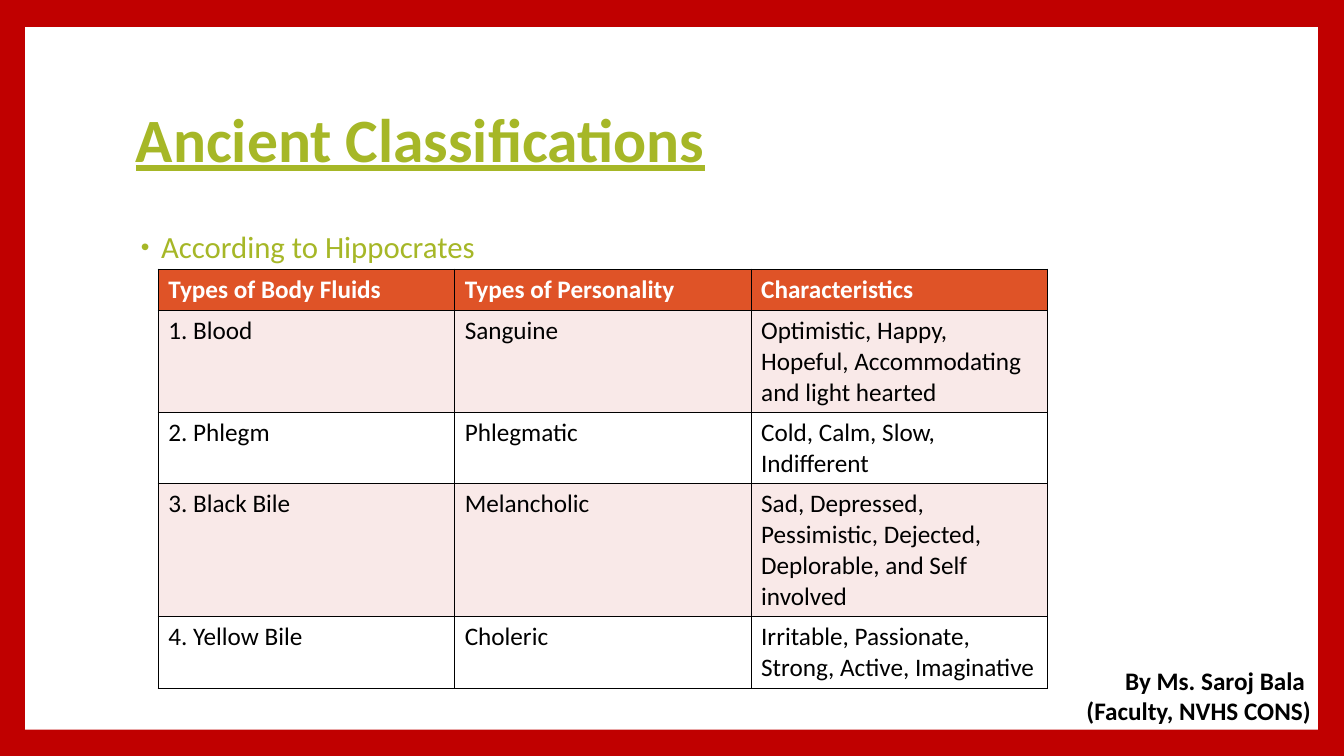
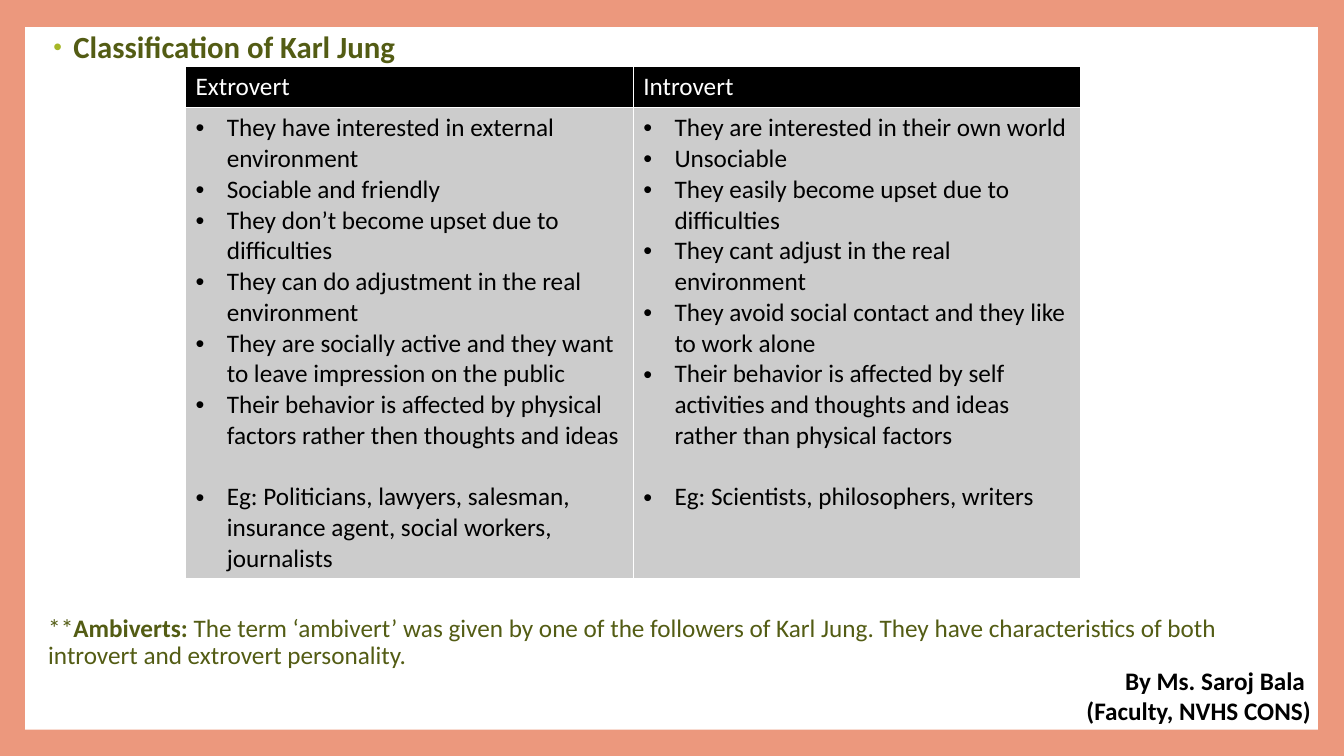
from lxml.etree import SubElement
from pptx import Presentation
from pptx.dml.color import RGBColor
from pptx.enum.shapes import MSO_SHAPE
from pptx.enum.text import MSO_ANCHOR, MSO_AUTO_SIZE, PP_ALIGN
from pptx.oxml.ns import qn
from pptx.util import Inches, Pt

# Content
CREDIT = ["By Ms. Saroj Bala ", "(Faculty, NVHS CONS)"]
TITLE = "Ancient Classifications"
FLUIDS_HEADING = "According to Hippocrates"
FLUIDS = [
    ("Types of Body Fluids", "Types of Personality", "Characteristics"),
    ("1. Blood", "Sanguine",
     "Optimistic, Happy, Hopeful, Accommodating and light hearted"),
    ("2. Phlegm", "Phlegmatic", "Cold, Calm, Slow, Indifferent"),
    ("3. Black Bile", "Melancholic",
     "Sad, Depressed, Pessimistic, Dejected, Deplorable, and Self involved"),
    ("4. Yellow Bile", "Choleric",
     "Irritable, Passionate, Strong, Active, Imaginative"),
]
JUNG_HEADING = "Classification of Karl Jung"
# A list in a cell becomes bullets; its last item, the examples, is set apart
JUNG = [
    ("Extrovert", "Introvert"),
    ([
        "They have interested in external environment",
        "Sociable and friendly",
        "They don’t become upset due to difficulties",
        "They can do adjustment in the real environment",
        "They are socially active and they want to leave impression on the public",
        "Their behavior is affected by physical factors rather then thoughts and ideas",
        "Eg: Politicians, lawyers, salesman, insurance agent, social workers, journalists",
    ], [
        "They are interested in their own world",
        "Unsociable",
        "They easily become upset due to difficulties",
        "They cant adjust in the real environment",
        "They avoid social contact and they like to work alone",
        "Their behavior is affected by self activities and thoughts and ideas "
        "rather than physical factors",
        "Eg: Scientists, philosophers, writers",
    ]),
]
AMBIVERTS = [
    ("**", False),
    ("Ambiverts:", True),
    (" The term ‘ambivert’ was given by one of the followers of Karl Jung. "
     "They have characteristics of both introvert and extrovert personality.", False),
]

# Theme
THEME = {
    "font": "Calibri",
    "red": "C00000", "salmon": "EC987D", "white": "FFFFFF", "black": "000000",
    "lime": "A6B727", "olive": "535C14",
    "orange": "DF5327", "blush": "F9E9E8", "grey": "CCCCCC",
    "title": 44, "heading": 22, "text": 18,
}


def color(name):
    return RGBColor.from_string(THEME[name])


# Text
def add_span(para, text, size, tint, **format_values):
    span = para.add_run()
    span.text = text
    values = {"name": THEME["font"], "size": Pt(THEME[size]), **format_values}
    for name, value in values.items():
        setattr(span.font, name, value)
    span.font.color.rgb = color(tint)


def add_bullet(para, margin, hang, tint=None, percent=None):
    properties = para._p.get_or_add_pPr()
    properties.set("marL", str(Inches(margin)))
    properties.set("indent", str(-Inches(hang)))
    if tint:
        holder = SubElement(properties, qn("a:buClr"))
        SubElement(holder, qn("a:srgbClr"), val=THEME[tint])
    if percent:
        SubElement(properties, qn("a:buSzPct"), val=str(percent * 1000))
    SubElement(properties, qn("a:buFont"), typeface="Arial")
    SubElement(properties, qn("a:buChar"), char="•")


def add_box(page, left, top, width, height, **format_values):
    box = page.shapes.add_textbox(*map(Inches, (left, top, width, height)))
    for name, value in {"word_wrap": True, **format_values}.items():
        setattr(box.text_frame, name, value)
    para = box.text_frame.paragraphs[0]
    para.line_spacing = 0.9
    return box, para


def add_heading(page, text, tint, place, bold):
    _, para = add_box(page, *place)
    add_span(para, text, "heading", tint, bold=bold)
    add_bullet(para, 0.25, 0.2, "lime", 80)


# Tables
def set_borders(cell, tint):
    properties = cell._tc.get_or_add_tcPr()
    for side in ("a:lnL", "a:lnR", "a:lnT", "a:lnB"):
        line = SubElement(properties, qn(side), w=str(Pt(1)))
        fill = SubElement(line, qn("a:solidFill"))
        SubElement(fill, qn("a:srgbClr"), val=THEME[tint])


def fill_cell(cell, content, tint, bold):
    frame = cell.text_frame
    if isinstance(content, str):
        add_span(frame.paragraphs[0], content, "text", tint, bold=bold)
        return
    for index, item in enumerate(content):
        para = frame.add_paragraph() if index else frame.paragraphs[0]
        if index == len(content) - 1:
            para.space_before = Pt(22)
        add_span(para, item, "text", tint, bold=bold)
        add_bullet(para, 0.31, 0.31)


def add_grid(page, rows, left, top, column_width, heights, header, bands,
             border, bold_header):
    count = len(rows[0])
    table = page.shapes.add_table(
        len(rows), count, Inches(left), Inches(top),
        Inches(column_width * count), Inches(sum(heights))).table
    for column in table.columns:
        column.width = Inches(column_width)
    for row_index, (contents, height) in enumerate(zip(rows, heights)):
        table.rows[row_index].height = Inches(height)
        is_header = row_index == 0
        fill = header if is_header else bands[(row_index - 1) % len(bands)]
        for column_index, content in enumerate(contents):
            cell = table.cell(row_index, column_index)
            set_borders(cell, border)
            cell.fill.solid()
            cell.fill.fore_color.rgb = color(fill)
            fill_cell(cell, content, "white" if is_header else "black",
                      is_header and bold_header)


# Shared frame and credit
def add_page(deck, frame_tint):
    page = deck.slides.add_slide(deck.slide_layouts[6])
    page.background.fill.solid()
    page.background.fill.fore_color.rgb = color(frame_tint)
    panel = page.shapes.add_shape(
        MSO_SHAPE.RECTANGLE, *map(Inches, (0.25, 0.27, 12.82, 6.97)))
    panel.shadow.inherit = False
    panel.fill.solid()
    panel.fill.fore_color.rgb = color("white")
    panel.line.fill.background()
    return page


def add_credit(page):
    box, first = add_box(page, 10.66, 6.55, 2.44, 0.71, word_wrap=False,
                         auto_size=MSO_AUTO_SIZE.SHAPE_TO_FIT_TEXT)
    for para, text in zip((first, box.text_frame.add_paragraph()), CREDIT):
        para.alignment = PP_ALIGN.RIGHT
        para.line_spacing = 1.0
        add_span(para, text, "text", "black", bold=True)


# Slides
def add_fluids_page(deck):
    page = add_page(deck, "red")
    _, para = add_box(page, 1.25, 0.67, 10.8, 1.48,
                      vertical_anchor=MSO_ANCHOR.MIDDLE)
    add_span(para, TITLE, "title", "lime", bold=True, underline=True)
    add_heading(page, FLUIDS_HEADING, "lime", (1.25, 2.25, 10.8, 0.42), False)
    add_grid(page, FLUIDS, 1.57, 2.67, 2.94, (0.41, 1.01, 0.71, 1.32, 0.71),
             "orange", ("blush", "white"), "black", True)
    add_credit(page)


def add_jung_page(deck):
    page = add_page(deck, "salmon")
    add_heading(page, JUNG_HEADING, "olive", (0.38, 0.27, 11.81, 0.42), True)
    add_grid(page, JUNG, 1.84, 0.66, 4.44, (0.41, 4.67),
             "black", ("grey",), "white", False)
    _, para = add_box(page, 0.38, 6.06, 11.81, 0.65)
    for text, bold in AMBIVERTS:
        add_span(para, text, "text", "olive", bold=bold)
    add_credit(page)


def main():
    deck = Presentation()
    deck.slide_width, deck.slide_height = Inches(13.33), Inches(7.5)
    add_fluids_page(deck)
    add_jung_page(deck)
    deck.save("out.pptx")


if __name__ == "__main__":
    main()
